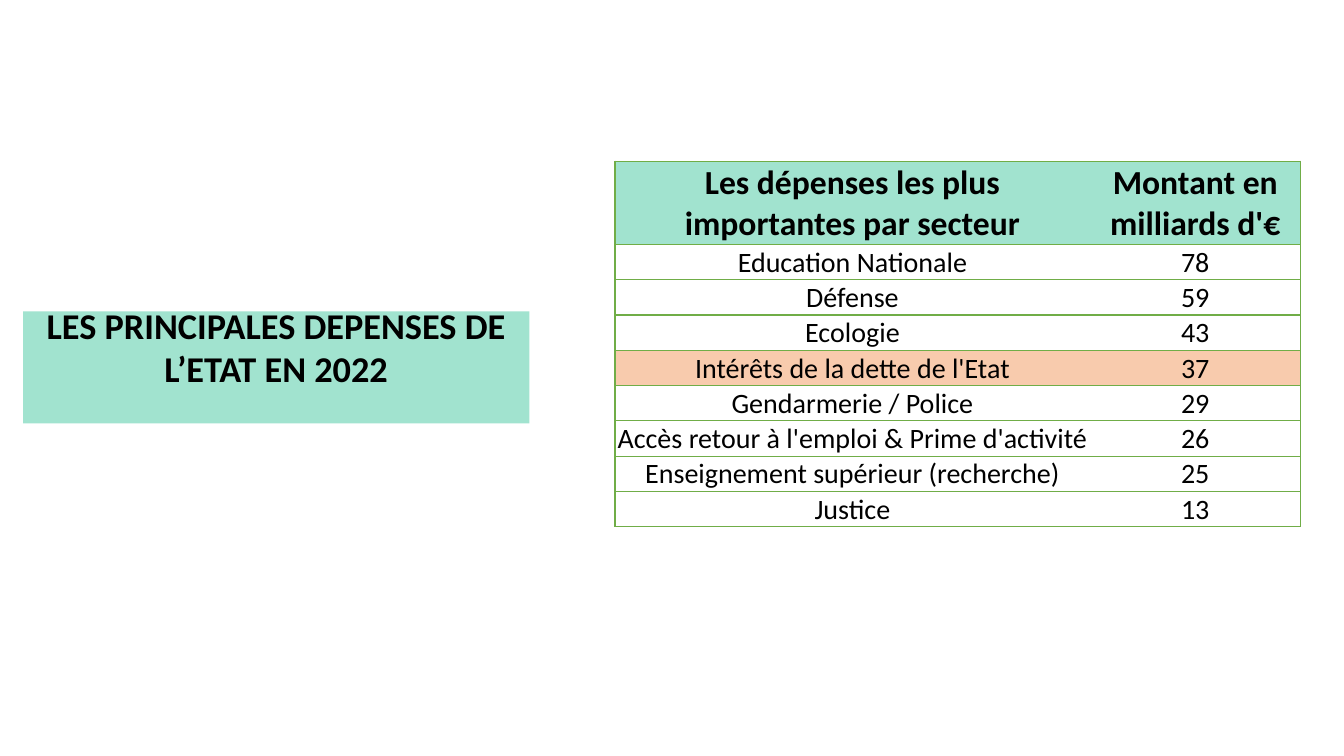
from dataclasses import dataclass

from lxml import etree
from pptx import Presentation
from pptx.dml.color import RGBColor
from pptx.enum.shapes import MSO_SHAPE
from pptx.enum.text import MSO_ANCHOR, PP_ALIGN
from pptx.oxml.ns import qn
from pptx.util import Inches, Pt

RECTANGLE = MSO_SHAPE.RECTANGLE
BOTTOM = MSO_ANCHOR.BOTTOM
CENTER = PP_ALIGN.CENTER


@dataclass(frozen=True)
class Theme:
    """Colours, font and type sizes of the slide."""

    font: str = "Calibri"
    ink: str = "000000"
    mint: str = "A1E3CF"
    peach: str = "F8CBAD"
    white: str = "FFFFFF"
    border: str = "70AD47"
    title_size: float = 25.9
    header_size: float = 24
    body_size: float = 20
    border_width: float = 1


THEME = Theme()
TITLE = "LES PRINCIPALES DEPENSES DE L’ETAT EN 2022"
HEADERS = ("Les dépenses les plus importantes par secteur", "Montant en milliards d'€")
DEBT = "Intérêts de la dette de l'Etat"
EXPENSES = (
    ("Education Nationale", 78),
    ("Défense", 59),
    ("Ecologie", 43),
    (DEBT, 37),
    ("Gendarmerie / Police", 29),
    ("Accès retour à l'emploi & Prime d'activité", 26),
    ("Enseignement supérieur (recherche)", 25),
    ("Justice", 13),
)
COLUMN_WIDTHS = (4.71, 2.09)
HEADER_HEIGHT = 0.82
ROW_HEIGHT = 0.35


def set_attributes(target, values):
    """Set each named attribute on the target."""
    for name, value in values.items():
        setattr(target, name, value)


def paint(fill, color):
    """Give a fill one solid colour."""
    fill.solid()
    fill.fore_color.rgb = RGBColor.from_string(color)


def write_text(text_frame, text, size, bold):
    """Write one centred paragraph."""
    paragraph = text_frame.paragraphs[0]
    paragraph.alignment = CENTER
    run = paragraph.add_run()
    run.text = text
    set_attributes(run.font, {"name": THEME.font, "size": Pt(size), "bold": bold})
    run.font.color.rgb = RGBColor.from_string(THEME.ink)


def set_borders(cell, visible_sides):
    """Draw the visible sides of a cell and clear the others."""
    properties = cell._tc.get_or_add_tcPr()
    for side in "LRTB":
        line = etree.SubElement(properties, qn(f"a:ln{side}"), w=str(Pt(THEME.border_width)))
        if side in visible_sides:
            solid = etree.SubElement(line, qn("a:solidFill"))
            etree.SubElement(solid, qn("a:srgbClr"), val=THEME.border)
        else:
            etree.SubElement(line, qn("a:noFill"))


def add_title(slide):
    """Add the coloured title block."""
    shape = slide.shapes.add_shape(
        RECTANGLE, Inches(0.23), Inches(3.09), Inches(5.02), Inches(1.11)
    )
    shape.shadow.inherit = False
    shape.line.fill.background()
    paint(shape.fill, THEME.mint)
    set_attributes(shape.text_frame, {
        "word_wrap": True,
        "vertical_anchor": BOTTOM,
        "margin_top": 0,
        "margin_bottom": Inches(0.33),
    })
    write_text(shape.text_frame, TITLE, THEME.title_size, True)


def fill_row(table, row_index, texts, color, size, bold):
    """Write and format one row of the table."""
    for column_index, text in enumerate(texts):
        cell = table.cell(row_index, column_index)
        set_attributes(cell, {
            "vertical_anchor": BOTTOM,
            "margin_left": Inches(0.01),
            "margin_right": Inches(0.01),
            "margin_top": Inches(0.01),
            "margin_bottom": 0,
        })
        set_borders(cell, "LTB" if column_index == 0 else "RTB")
        paint(cell.fill, color)
        write_text(cell.text_frame, str(text), size, bold)


def add_expense_table(slide):
    """Add the table of expenses by sector."""
    row_heights = [HEADER_HEIGHT] + [ROW_HEIGHT] * len(EXPENSES)
    table = slide.shapes.add_table(
        len(row_heights), len(COLUMN_WIDTHS), Inches(6.1), Inches(1.6),
        Inches(sum(COLUMN_WIDTHS)), Inches(sum(row_heights)),
    ).table
    set_attributes(table, {"first_row": False, "horz_banding": False})
    for column, width in zip(table.columns, COLUMN_WIDTHS):
        column.width = Inches(width)
    for row, height in zip(table.rows, row_heights):
        row.height = Inches(height)
    fill_row(table, 0, HEADERS, THEME.mint, THEME.header_size, True)
    for row_index, expense in enumerate(EXPENSES, start=1):
        color = THEME.peach if expense[0] == DEBT else THEME.white
        fill_row(table, row_index, expense, color, THEME.body_size, False)


def main():
    """Build and save the slide."""
    presentation = Presentation()
    set_attributes(presentation, {
        "slide_width": Inches(13.33),
        "slide_height": Inches(7.5),
    })
    slide = presentation.slides.add_slide(presentation.slide_layouts[6])
    add_expense_table(slide)
    add_title(slide)
    presentation.save("out.pptx")


if __name__ == "__main__":
    main()
